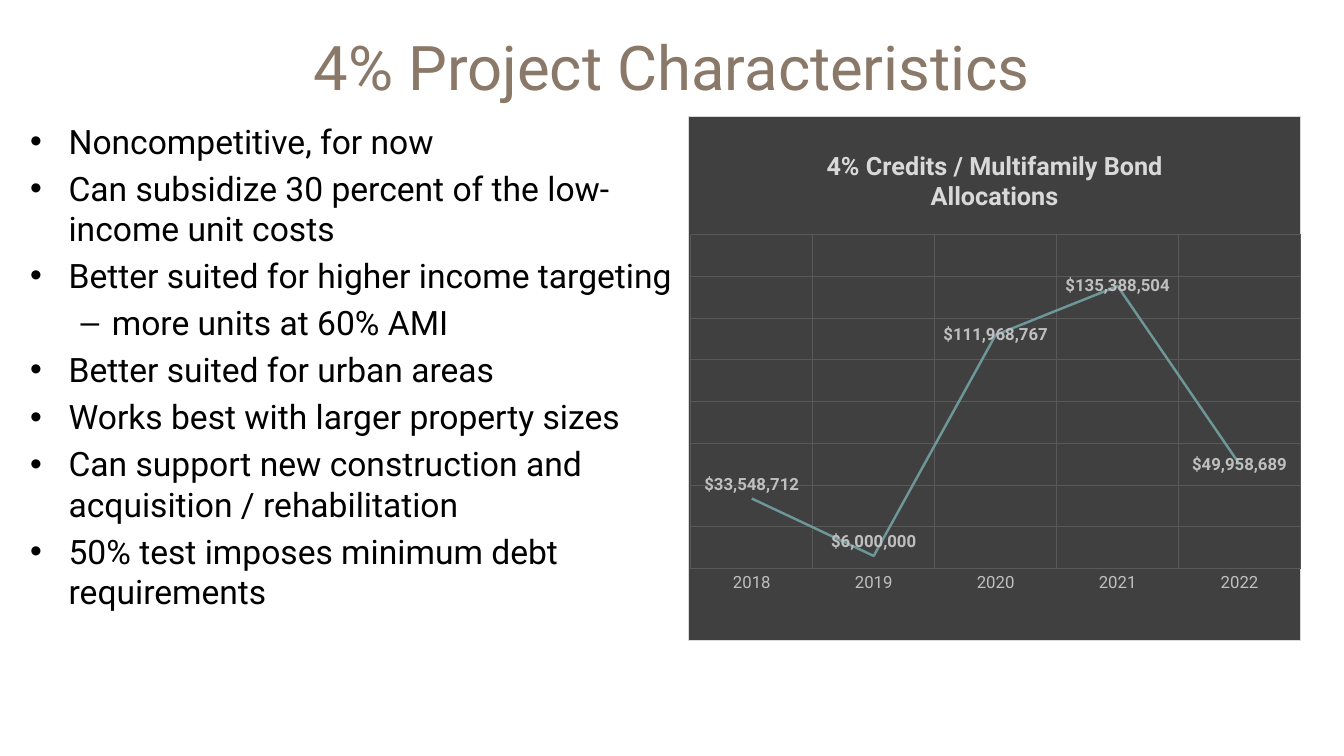
from dataclasses import dataclass

from lxml import etree
from pptx import Presentation
from pptx import util as u
from pptx.chart import data as chart_data
from pptx.dml.color import RGBColor
from pptx.enum import chart as ch, text
from pptx.oxml import parse_xml
from pptx.oxml.ns import nsdecls, qn


@dataclass(frozen=True)
class Theme:
    font: str = "Roboto"
    title: str = "8A7868"
    body: str = "000000"
    panel: str = "404040"
    border: str = "D9D9D9"
    grid: str = "595959"
    label: str = "BFBFBF"
    line: str = "6D9799"
    title_size: int = 44
    body_size: int = 24
    chart_title_size: int = 18
    label_size: int = 12


THEME = Theme()
BULLETS = [
    (0, "Noncompetitive, for now"),
    (0, "Can subsidize 30 percent of the low-income unit costs"),
    (0, "Better suited for higher income targeting"),
    (1, "more units at 60% AMI"),
    (0, "Better suited for urban areas"),
    (0, "Works best with larger property sizes"),
    (0, "Can support new construction and acquisition / rehabilitation"),
    (0, "50% test imposes minimum debt requirements"),
]
LEVELS = [("•", 0.97, -0.97), ("–", 2.06, -0.79)]  # mark, margin and indent in cm
CHART_TITLE = ["4% Credits / Multifamily Bond", "Allocations"]
ALLOCATIONS = {
    "2018": 33548712,
    "2019": 6000000,
    "2020": 111968767,
    "2021": 135388504,
    "2022": 49958689,
}
LABELS_ABOVE = (0, 1)


def style_font(font, size, color, bold=False):
    font.name = THEME.font
    font.size = u.Pt(size)
    font.bold = bold
    font.color.rgb = RGBColor.from_string(color)


def add_text_frame(slide, box):
    tf = slide.shapes.add_textbox(*map(u.Cm, box)).text_frame
    tf.word_wrap = True
    return tf


def add_title(slide, box):
    tf = add_text_frame(slide, box)
    tf.vertical_anchor = text.MSO_ANCHOR.MIDDLE
    tf.text = "4% Project Characteristics"
    p = tf.paragraphs[0]
    p.alignment = text.PP_ALIGN.CENTER
    style_font(p.runs[0].font, THEME.title_size, THEME.title)


def add_bullets(slide, box):
    tf = add_text_frame(slide, box)
    for i, (level, words) in enumerate(BULLETS):
        p = tf.add_paragraph() if i else tf.paragraphs[0]
        p.text = words
        p.level = level
        if i:
            p.space_before = u.Pt(0.2 * THEME.body_size)
        mark, margin, indent = LEVELS[level]
        pPr = p._p.get_or_add_pPr()
        pPr.set("marL", str(u.Cm(margin)))
        pPr.set("indent", str(u.Cm(indent)))
        etree.SubElement(pPr, qn("a:buFont")).set("typeface", "Arial")
        etree.SubElement(pPr, qn("a:buChar")).set("char", mark)
        style_font(p.runs[0].font, THEME.body_size, THEME.body)


def set_layout(parent, after, inner=False, **places):
    """Place a chart part by fractions of the chart's size."""
    for old in parent.findall(qn("c:layout")):
        parent.remove(old)
    layout = etree.Element(qn("c:layout"))
    manual = etree.SubElement(layout, qn("c:manualLayout"))
    values = {"layoutTarget": "inner"} if inner else {}
    values.update(xMode="edge", yMode="edge", **places)
    for name, value in values.items():
        etree.SubElement(manual, qn(f"c:{name}")).set("val", str(value))
    if after is None:
        parent.insert(0, layout)
    else:
        after.addnext(layout)


def fill_panel(chart):
    chart._chartSpace.find(qn("c:chart")).addnext(parse_xml(
        f'<c:spPr {nsdecls("c", "a")}>'
        f'<a:solidFill><a:srgbClr val="{THEME.panel}"/></a:solidFill>'
        f'<a:ln w="{u.Pt(0.75)}"><a:solidFill><a:srgbClr val="{THEME.border}"/>'
        '</a:solidFill></a:ln></c:spPr>'))


def style_axes(chart):
    for axis in (chart.category_axis, chart.value_axis):
        axis.has_major_gridlines = True
        line = axis.major_gridlines.format.line
        line.width = u.Pt(0.75)
        line.color.rgb = RGBColor.from_string(THEME.grid)
        axis.major_tick_mark = ch.XL_TICK_MARK.NONE
    chart.category_axis.format.line.fill.background()
    style_font(chart.category_axis.tick_labels.font, THEME.label_size, THEME.label)
    values = chart.value_axis
    values.minimum_scale, values.maximum_scale = 0, 160_000_000
    values.major_unit = 20_000_000
    values.visible = False


def style_series(series):
    series.smooth = False
    series.format.line.width = u.Pt(1.75)
    series.format.line.color.rgb = RGBColor.from_string(THEME.line)
    series.marker.style = ch.XL_MARKER_STYLE.NONE
    labels = series.data_labels
    labels.show_value = True
    labels.number_format = '"$"#,##0'
    labels.number_format_is_linked = False
    labels.position = ch.XL_LABEL_POSITION.CENTER
    style_font(labels.font, THEME.label_size, THEME.label, True)
    for i in LABELS_ABOVE:
        label = series.points[i].data_label
        style_font(label.font, THEME.label_size, THEME.label, True)
        label.position = ch.XL_LABEL_POSITION.ABOVE


def add_allocations_chart(slide, box):
    data = chart_data.CategoryChartData(number_format='"$"#,##0')
    data.categories = list(ALLOCATIONS)
    data.add_series("Series 1", list(ALLOCATIONS.values()))
    chart = slide.shapes.add_chart(
        ch.XL_CHART_TYPE.LINE, *map(u.Cm, box), data).chart
    style_font(chart.font, 10, THEME.body)
    chart.has_legend = False
    fill_panel(chart)

    tf = chart.chart_title.text_frame
    for i, words in enumerate(CHART_TITLE):
        p = tf.add_paragraph() if i else tf.paragraphs[0]
        p.text = words
        p.alignment = text.PP_ALIGN.CENTER
        style_font(p.runs[0].font, THEME.chart_title_size, THEME.border, True)
    title = chart.chart_title._element
    set_layout(title, title.find(qn("c:tx")), x=0.22, y=0.06)
    chart.chart_title.include_in_layout = False

    style_axes(chart)
    plot = chart.plots[0]
    plot.vary_by_categories = False
    style_series(plot.series[0])
    set_layout(chart._chartSpace.chart.plotArea, None, inner=True,
               x=0.003, y=0.226, w=0.997, h=0.637)


def main():
    prs = Presentation()
    prs.slide_width, prs.slide_height = u.Cm(33.87), u.Cm(19.05)
    slide = prs.slides.add_slide(prs.slide_layouts[6])
    top, height = 2.92, 13.23
    add_title(slide, (0.43, 0.08, 33.02, 3.18))
    add_bullets(slide, (0.51, top, 16.87, height))
    add_allocations_chart(slide, (17.35, top, 15.44, height))
    prs.save("out.pptx")


if __name__ == "__main__":
    main()
